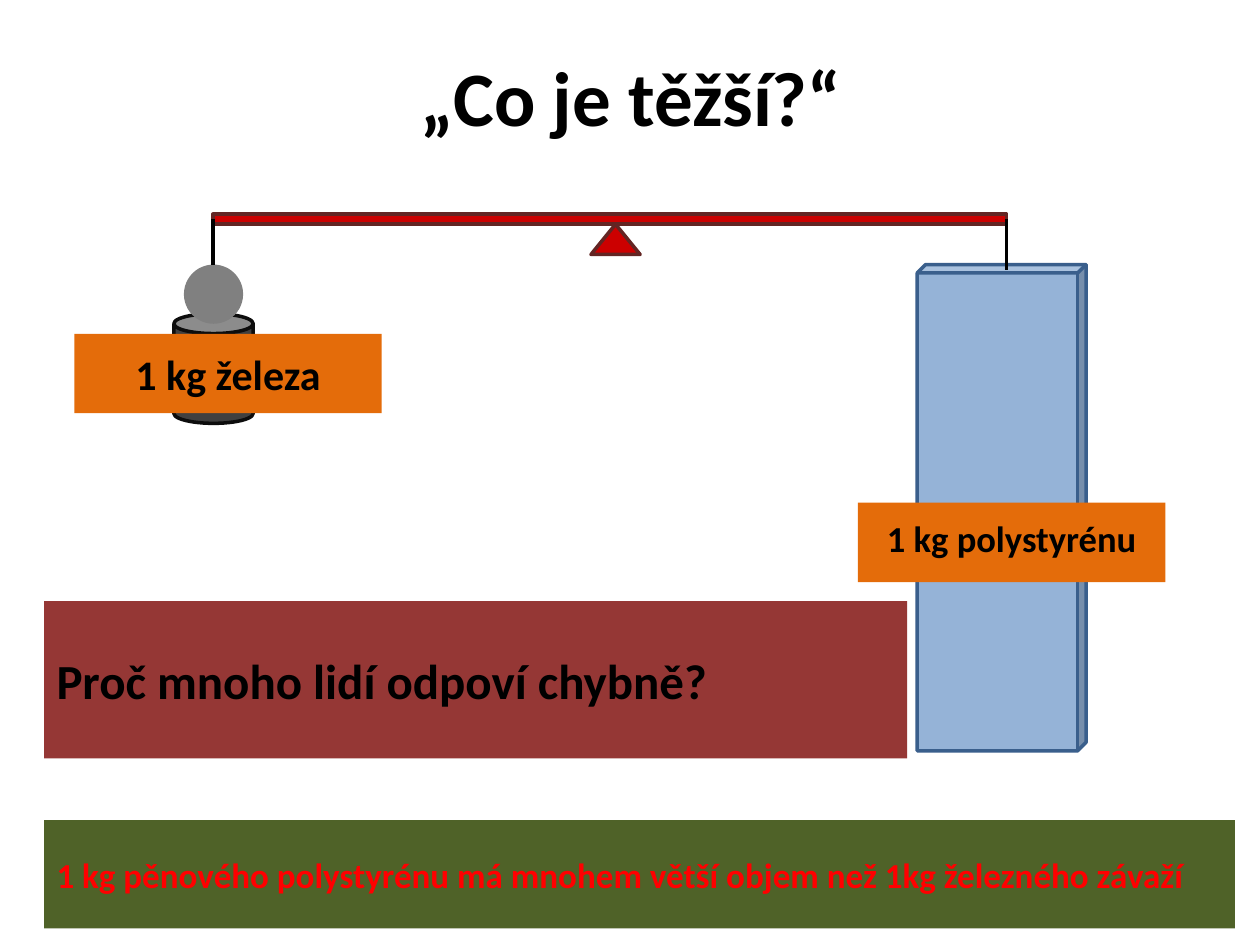
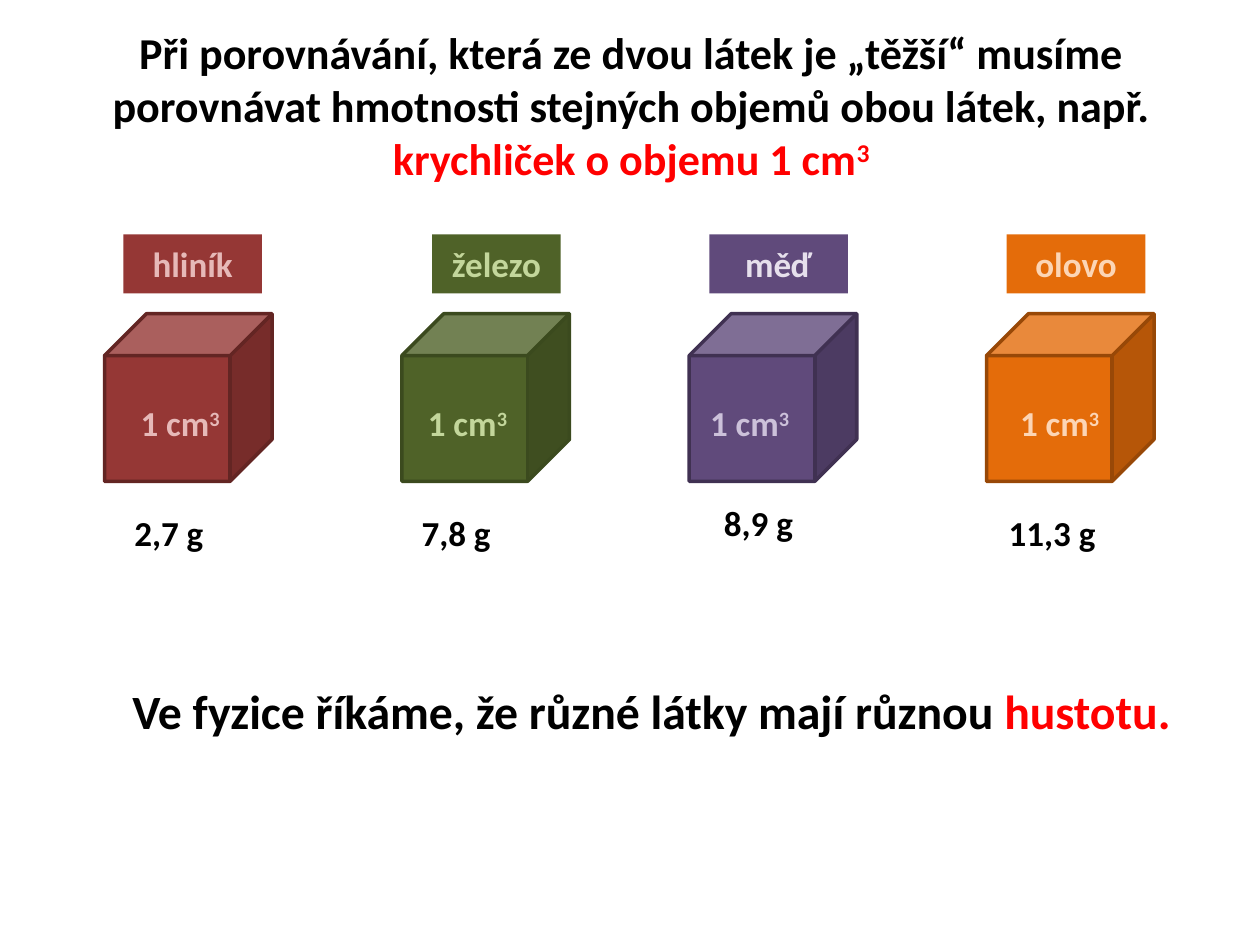
import pptx
import pptx.dml.color
import pptx.enum.shapes
import pptx.enum.text
import pptx.oxml.ns
import pptx.util
from lxml import etree

Inches = pptx.util.Inches
SHAPES = pptx.enum.shapes.MSO_SHAPE
ALIGN = pptx.enum.text.PP_ALIGN

FONT = "Calibri"
BLACK, WHITE, RED = "000000", "FFFFFF", "FF0000"
BEAM_RED, BEAM_EDGE = "CC0000", "632523"
MAROON, GREEN, PURPLE, ORANGE = "953735", "4F6228", "604A7B", "E46C0A"
TITLE_LEFT, TITLE_TOP, TITLE_WIDTH = 0.51, 0.21, 9

# name, fill, edge, name colour, volume colour, cube left,
# name box (left, width), volume left, mass, mass box (left, top, width)
METALS = [
    ("hliník", MAROON, "632523", "E6B9B8", "E6B9B8", 0.83,
     (0.98, 1.1), 0.84, "2,7 g", (0.75, 3.91, 1.18)),
    ("železo", GREEN, "3B4A1E", "C3D69B", "C3D69B", 3.19,
     (3.43, 1.02), 3.12, "7,8 g", (3.03, 3.91, 1.18)),
    ("měď", PURPLE, "403152", "E6E0EC", "CCC1DA", 5.47,
     (5.63, 1.1), 5.36, "8,9 g", (5.31, 3.83, 1.42)),
    ("olovo", ORANGE, "984807", "FCD5B5", "FCD5B5", 7.83,
     (7.99, 1.1), 7.82, "11,3 g", (7.76, 3.91, 1.18)),
]


def rgb(color):
    """Turn a hex string into a colour."""
    return pptx.dml.color.RGBColor.from_string(color)


def add_shape(s, kind, box, fill, edge=None):
    """Add a flat preset shape with an optional 2 pt outline."""
    sp = s.shapes.add_shape(kind, *map(Inches, box))
    sp.shadow.inherit = False
    sp.fill.solid()
    sp.fill.fore_color.rgb = rgb(fill)
    if edge:
        sp.line.color.rgb = rgb(edge)
        sp.line.width = pptx.util.Pt(2)
    else:
        sp.line.fill.background()
    return sp


def write(sp, runs, size, color=BLACK, align=ALIGN.CENTER):
    """Write bold (text, colour, superscript) runs, or one plain string."""
    tf = sp.text_frame
    tf.word_wrap = True
    tf.vertical_anchor = pptx.enum.text.MSO_ANCHOR.MIDDLE
    p = tf.paragraphs[0]
    p.alignment = align
    p.font.name, p.font.size, p.font.bold = FONT, pptx.util.Pt(size), True
    p.font.color.rgb = rgb(color)
    if isinstance(runs, str):
        runs = [(runs, color, False)]
    for text, run_color, raised in runs:
        r = p.add_run()
        r.text = text
        if run_color != color:
            r.font.color.rgb = rgb(run_color)
        if raised:
            r._r.get_or_add_rPr().set("baseline", "30000")
    return p


def add_text(s, box, runs, size, color=BLACK):
    """Add a centred text box."""
    return write(s.shapes.add_textbox(*map(Inches, box)), runs, size, color)


def add_label(s, box, fill, runs, size, color=BLACK, align=ALIGN.CENTER):
    """Add a filled rectangle with text."""
    return write(add_shape(s, SHAPES.RECTANGLE, box, fill), runs, size, color, align)


def add_title(s, height, runs, size):
    """Add the slide title."""
    add_text(s, (TITLE_LEFT, TITLE_TOP, TITLE_WIDTH, height), runs, size)


def add_string(s, x, top, bottom):
    """Add a vertical black string hanging from the beam."""
    line = s.shapes.add_connector(pptx.enum.shapes.MSO_CONNECTOR.STRAIGHT,
                                  *map(Inches, (x, top, x, bottom)))
    line.line.color.rgb = rgb(BLACK)
    line.line.width = pptx.util.Pt(2)
    etree.SubElement(line._element.spPr, pptx.oxml.ns.qn("a:effectLst"))


def add_balance(s):
    """Draw the beam, its pivot and the two hanging loads."""
    left, width, middle = 1.69, 6.3, 1.74
    add_shape(s, SHAPES.CAN, (1.38, 2.49, 0.63, 0.87), "404040", "0D0D0D")
    add_shape(s, SHAPES.RECTANGLE, (left, 1.7, width, 0.08), BEAM_RED, BEAM_EDGE)
    add_shape(s, SHAPES.ISOSCELES_TRIANGLE, (4.69, 1.78, 0.39, 0.24),
              BEAM_RED, BEAM_EDGE)
    add_shape(s, SHAPES.OVAL, (1.46, 2.1, 0.47, 0.47), "808080")
    add_string(s, left, middle, 2.1)
    block = add_shape(s, SHAPES.CUBE, (7.28, 2.1, 1.34, 3.86), "95B3D7", "3A5F8C")
    block.adjustments[0] = 0.05
    add_string(s, left + width, middle, 2.14)


def add_metal(s, name, fill, edge, name_color, volume_color, cube_left,
              name_box, volume_left, mass, mass_box):
    """Add one metal: name, cube with its volume, and mass."""
    add_shape(s, SHAPES.CUBE, (cube_left, 2.49, 1.33, 1.33), fill, edge)
    volume = [("1 cm", volume_color, False), ("3", volume_color, True)]
    add_text(s, (volume_left, 3.04, 1.18, 0.63), volume, 20, volume_color)
    add_text(s, (*mass_box, 0.63), mass, 20)
    name_left, name_width = name_box
    add_label(s, (name_left, 1.86, name_width, 0.47), fill, name, 20, name_color)


def build_question(s):
    """Build the slide that asks which load is heavier."""
    add_title(s, 1.1, "„Co je těžší?“", 44)
    add_balance(s)
    add_label(s, (0.35, 4.77, 6.85, 1.25), MAROON,
              "Proč mnoho lidí odpoví chybně?", 28, align=ALIGN.LEFT)
    add_label(s, (0.59, 2.65, 2.44, 0.63), ORANGE, "1 kg železa", 24)
    p = add_label(s, (6.81, 3.99, 2.44, 0.63), ORANGE, "1 kg polystyrénu", 20.9)
    p.line_spacing = 0.8
    add_label(s, (0.35, 6.51, 9.45, 0.86), GREEN,
              "1 kg pěnového polystyrénu má mnohem větší objem než 1kg železného závaží",
              20, RED, ALIGN.LEFT)


def build_density(s):
    """Build the slide that compares equal volumes of four metals."""
    add_title(s, 1.25, [
        ("Při porovnávání, která ze dvou látek je „těžší“ musíme porovnávat "
         "hmotnosti stejných objemů obou látek, např. ", BLACK, False),
        ("krychliček o objemu 1 cm", RED, False),
        ("3", RED, True)], 25.2)
    for metal in METALS:
        add_metal(s, *metal)
    add_label(s, (0.59, 5.01, 9.16, 1.25), WHITE, [
        ("Ve fyzice říkáme, že různé látky mají různou ", BLACK, False),
        ("hustotu.", RED, False)], 27.3)


def main():
    """Build and save the presentation."""
    prs = pptx.Presentation()
    prs.slide_width, prs.slide_height = Inches(10), Inches(7.5)
    for build in (build_question, build_density):
        build(prs.slides.add_slide(prs.slide_layouts[6]))
    prs.save("out.pptx")


if __name__ == "__main__":
    main()
